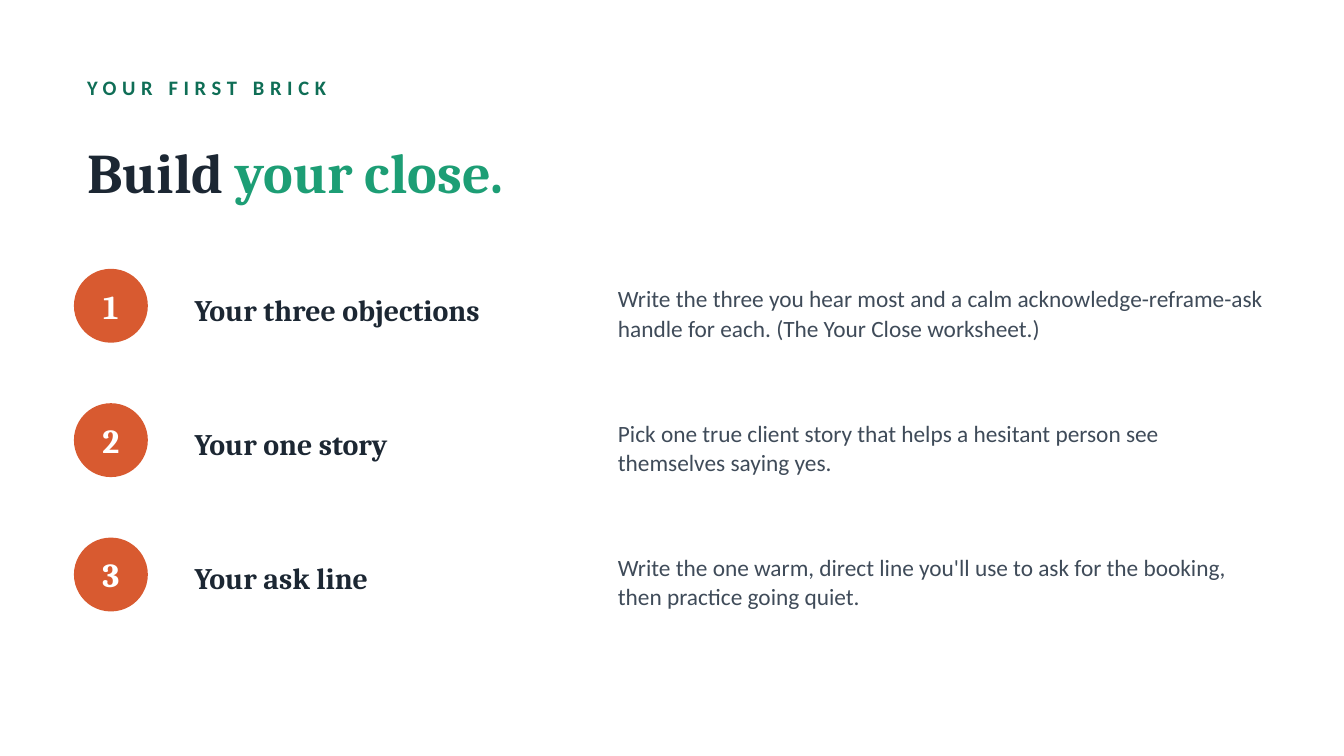
"""Build the "Build your close." slide with its three numbered steps."""
from dataclasses import dataclass

import pptx
import pptx.dml.color
import pptx.enum.shapes
import pptx.enum.text
import pptx.util


@dataclass(frozen=True)
class Theme:
    heading_font: str = "Cambria"
    body_font: str = "Calibri"
    ink: str = "1C2733"
    body: str = "3F4B59"
    kicker: str = "0F6E56"
    accent: str = "1D9E75"
    badge: str = "D85A30"
    paper: str = "FFFFFF"
    title_size: float = 30
    number_size: float = 18
    step_size: float = 16
    body_size: float = 12.5
    kicker_size: float = 11


@dataclass(frozen=True)
class Step:
    name: str
    task: str


THEME = Theme()
SLIDE_WIDTH = 10
SLIDE_HEIGHT = SLIDE_WIDTH * 9 / 16
LEFT = 0.55
CONTENT_WIDTH = 8.9
FIRST_STEP_TOP = 2
STEP_PITCH = 1
BADGE_SIZE = 0.55
STEPS = (
    Step("Your three objections",
         "Write the three you hear most and a calm acknowledge-reframe-ask "
         "handle for each. (The Your Close worksheet.)"),
    Step("Your one story",
         "Pick one true client story that helps a hesitant person see "
         "themselves saying yes."),
    Step("Your ask line",
         "Write the one warm, direct line you'll use to ask for the booking, "
         "then practice going quiet."),
)


def rgb(value: str) -> pptx.dml.color.RGBColor:
    return pptx.dml.color.RGBColor.from_string(value)


def inches(*lengths: float) -> list[pptx.util.Length]:
    return [pptx.util.Inches(length) for length in lengths]


def write(frame, text: str, *, size: float, color: str,
          font: str = THEME.heading_font, bold: bool = True,
          align=pptx.enum.text.PP_ALIGN.LEFT,
          line_spacing: float | None = None, tracking: float = 0) -> None:
    frame.word_wrap = True
    frame.auto_size = pptx.enum.text.MSO_AUTO_SIZE.NONE
    frame.vertical_anchor = pptx.enum.text.MSO_ANCHOR.MIDDLE
    paragraph = frame.paragraphs[0]
    paragraph.alignment = align
    if line_spacing:
        paragraph.line_spacing = line_spacing
    run = paragraph.add_run()
    run.text = text
    run.font.name = font
    run.font.size = pptx.util.Pt(size)
    run.font.bold = bold
    run.font.color.rgb = rgb(color)
    if tracking:
        run.font._element.set("spc", str(round(tracking * 100)))


def add_text(slide, left: float, top: float, width: float, height: float,
             text: str, **text_format) -> None:
    box = slide.shapes.add_textbox(*inches(left, top, width, height))
    write(box.text_frame, text, **text_format)


def add_title(slide) -> None:
    title = slide.shapes.title
    title.left, title.top, title.width, title.height = inches(
        LEFT, 0.85, CONTENT_WIDTH, 0.85)
    for text, color in (("Build ", THEME.ink), ("your close.", THEME.accent)):
        write(title.text_frame, text, size=THEME.title_size, color=color)


def add_badge(slide, top: float, number: int) -> None:
    badge = slide.shapes.add_shape(
        pptx.enum.shapes.MSO_SHAPE.OVAL,
        *inches(LEFT, top, BADGE_SIZE, BADGE_SIZE))
    badge.shadow.inherit = False
    badge.fill.solid()
    badge.fill.fore_color.rgb = rgb(THEME.badge)
    badge.line.fill.background()
    frame = badge.text_frame
    frame.margin_left = frame.margin_right = 0
    frame.margin_top = frame.margin_bottom = 0
    write(frame, str(number), size=THEME.number_size, color=THEME.paper,
          align=pptx.enum.text.PP_ALIGN.CENTER)


def add_step(slide, number: int, step: Step) -> None:
    top = FIRST_STEP_TOP + (number - 1) * STEP_PITCH
    add_badge(slide, top, number)
    add_text(slide, 1.35, top - 0.05, 3, 0.7, step.name,
             size=THEME.step_size, color=THEME.ink)
    add_text(slide, 4.5, top - 0.05, 5, 0.75, step.task,
             size=THEME.body_size, color=THEME.body, font=THEME.body_font,
             bold=False, line_spacing=1.05)


def main() -> None:
    deck = pptx.Presentation()
    deck.slide_width, deck.slide_height = inches(SLIDE_WIDTH, SLIDE_HEIGHT)
    slide = deck.slides.add_slide(deck.slide_layouts.get_by_name("Title Only"))
    slide.background.fill.solid()
    slide.background.fill.fore_color.rgb = rgb(THEME.paper)
    add_text(slide, LEFT, 0.5, CONTENT_WIDTH, 0.3, "YOUR FIRST BRICK",
             size=THEME.kicker_size, color=THEME.kicker,
             font=THEME.body_font, tracking=3)
    add_title(slide)
    for number, step in enumerate(STEPS, start=1):
        add_step(slide, number, step)
    deck.save("out.pptx")


if __name__ == "__main__":
    main()
